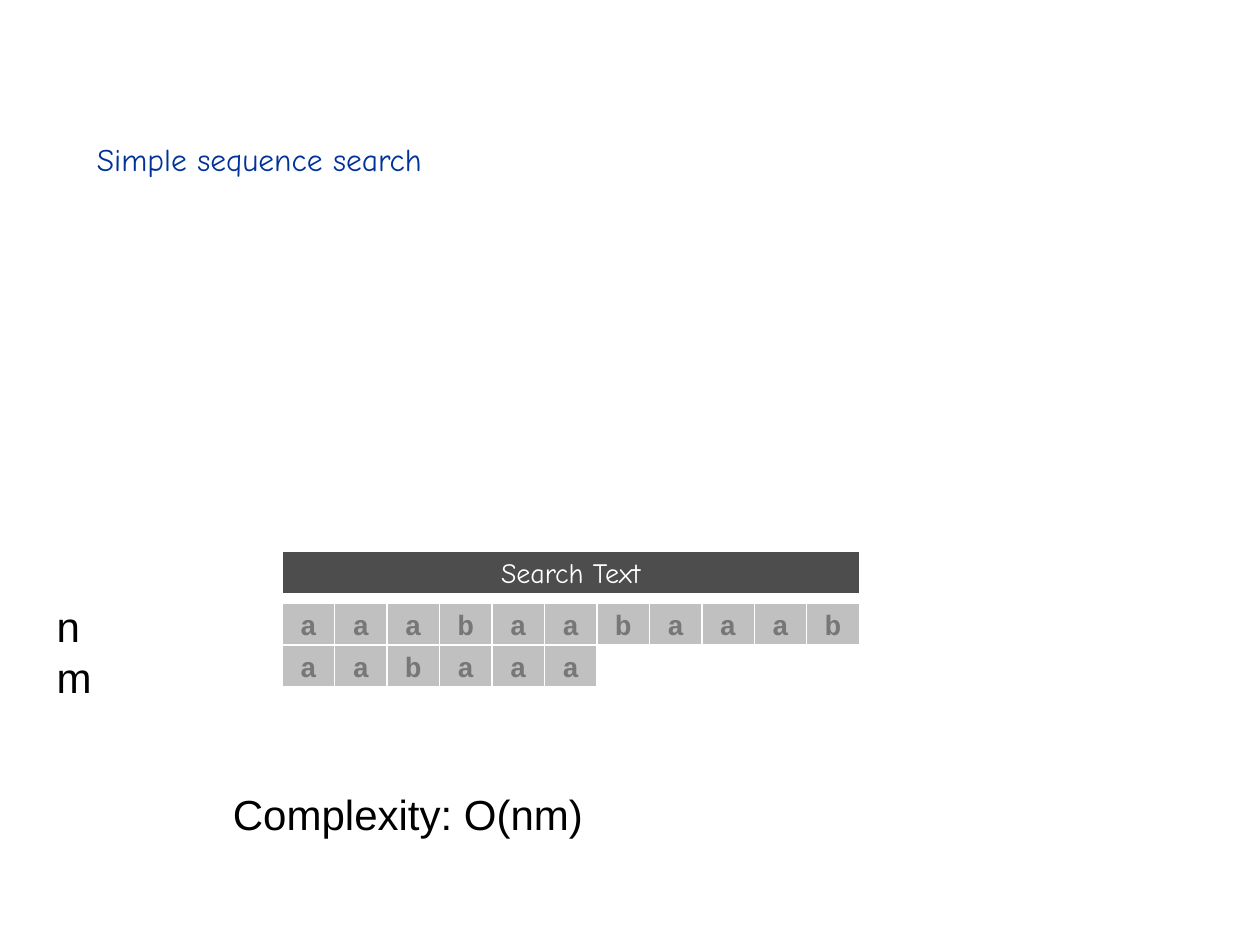
"""Build the slide on simple sequence search and its complexity."""
from pptx import Presentation
from pptx import util as u
from pptx.dml.color import RGBColor
from pptx.enum import shapes, text

BLUE = RGBColor(0x00, 0x33, 0x99)
BLACK = RGBColor(0x00, 0x00, 0x00)
WHITE = RGBColor(0xFF, 0xFF, 0xFF)
DARK = RGBColor(0x4D, 0x4D, 0x4D)
LIGHT = RGBColor(0xC0, 0xC0, 0xC0)
GRAY = RGBColor(0x77, 0x77, 0x77)

deck = Presentation()
deck.slide_width, deck.slide_height = u.Inches(10), u.Inches(7.5)
slide = deck.slides.add_slide(deck.slide_layouts[6])

COL, ROW = u.Inches(4.58 / 11), u.Inches(0.33)
LEFT, TOP = u.Inches(2.24), u.Inches(4.79)

HEAD = dict(name="Comic Neue", size=u.Pt(18), bold=False)
BAR = dict(name="Comic Neue", size=u.Pt(16), bold=False)
CELL = dict(name="Courier New", size=u.Pt(16), bold=True)
NOTE = dict(name="Arial", size=u.Pt(24), bold=False)


def write(shape, lines, style, color, wrap=False):
    frame = shape.text_frame
    frame.word_wrap = wrap
    frame.text = "\n".join(lines)
    for para in frame.paragraphs:
        for key, value in style.items():
            setattr(para.font, key, value)
        para.font.color.rgb = color
    return frame


def block(col, top, span, word, style, ink, fill):
    box = slide.shapes.add_shape(
        shapes.MSO_SHAPE.RECTANGLE, LEFT + col * COL, top, span * COL, ROW)
    box.shadow.inherit = False
    box.fill.solid()
    box.fill.fore_color.rgb = fill
    box.line.color.rgb = WHITE
    box.line.width = u.Pt(0.75)
    frame = write(box, [word], style, ink)
    frame.vertical_anchor = text.MSO_ANCHOR.MIDDLE
    frame.paragraphs[0].alignment = text.PP_ALIGN.CENTER


title = slide.shapes.add_textbox(
    u.Inches(0.67), u.Inches(1), u.Inches(8.58), u.Inches(5.92))
frame = write(title, ["Simple sequence search"], HEAD, BLUE, True)
frame.paragraphs[0].line_spacing = u.Pt(26)

block(0, u.Inches(4.38), 11, "Search Text", BAR, WHITE, DARK)
for row, word in enumerate(["aaabaabaaab", "aabaaa"]):
    for col, char in enumerate(word):
        block(col, TOP + row * ROW, 1, char, CELL, GRAY, LIGHT)

for left, top, wide, high, lines in [
    (0.35, 4.72, 0.48, 0.9, ["n", "m"]),
    (1.75, 6.21, 2.98, 0.5, ["Complexity: O(nm)"]),
]:
    label = slide.shapes.add_textbox(
        u.Inches(left), u.Inches(top), u.Inches(wide), u.Inches(high))
    frame = write(label, lines, NOTE, BLACK)
    frame.auto_size = text.MSO_AUTO_SIZE.SHAPE_TO_FIT_TEXT

deck.save("out.pptx")
